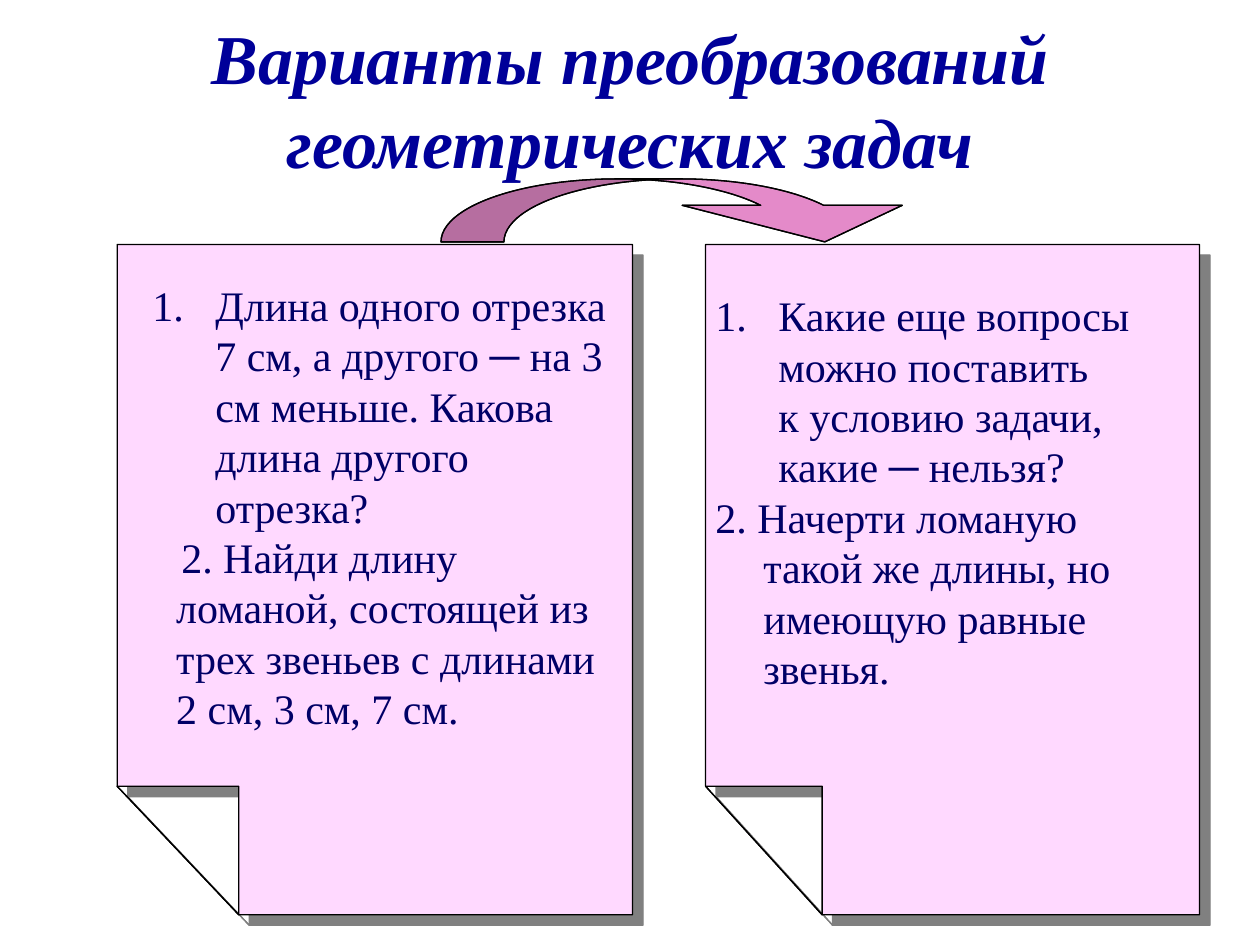
from lxml import etree
from pptx import Presentation
from pptx.dml.color import RGBColor
from pptx.enum.shapes import MSO_SHAPE
from pptx.enum.text import MSO_ANCHOR, MSO_AUTO_SIZE, PP_ALIGN
from pptx.oxml.ns import qn
from pptx.util import Inches, Pt

CENTER = PP_ALIGN.CENTER
MIDDLE = MSO_ANCHOR.MIDDLE
FIXED = MSO_AUTO_SIZE.NONE
GROW = MSO_AUTO_SIZE.SHAPE_TO_FIT_TEXT
CURVED_ARROW = MSO_SHAPE.CURVED_DOWN_ARROW
TITLE_ONLY = 5

PAPER = RGBColor(0xFF, 0xD9, 0xFF)
ARROW = RGBColor(0xE1, 0x87, 0xC3)
GLAZE = RGBColor(0xFF, 0xA5, 0xFF)
BLACK = RGBColor(0x00, 0x00, 0x00)
TITLE_BLUE = RGBColor(0x00, 0x00, 0x99)
TEXT_BLUE = RGBColor(0x00, 0x00, 0x66)
SHADOW_GREY = RGBColor(0x80, 0x80, 0x80)
FONT = "Times New Roman"


def write(paragraph, text, size=24, color=TEXT_BLUE, bold=False, italic=False,
          align=None, margin=0, indent=0, numbered=False):
    properties = paragraph._p.get_or_add_pPr()
    properties.set("marL", str(Inches(margin)))
    properties.set("indent", str(Inches(indent)))
    if numbered:
        etree.SubElement(properties, qn("a:buAutoNum"), type="arabicPeriod")
    else:
        etree.SubElement(properties, qn("a:buNone"))
    paragraph.alignment = align
    paragraph.text = text
    for run in paragraph.runs:
        run.font.name = FONT
        run.font.size = Pt(size)
        run.font.bold = bold
        run.font.italic = italic
        run.font.color.rgb = color


class SlideBuilder:
    def __init__(self, slide):
        self.slide = slide

    def title(self, text, left, top, width, height):
        title = self.slide.shapes.title
        title.left, title.top = Inches(left), Inches(top)
        title.width, title.height = Inches(width), Inches(height)
        frame = title.text_frame
        frame.word_wrap = True
        frame.auto_size = FIXED
        frame.vertical_anchor = MIDDLE
        write(frame.paragraphs[0], text, size=40, color=TITLE_BLUE,
              bold=True, italic=True, align=CENTER)

    def paint(self, shape, color):
        shape.fill.solid()
        shape.fill.fore_color.rgb = color
        shape.line.color.rgb = BLACK
        shape.line.width = Pt(0.75)
        shape.shadow.inherit = False

    def sheet(self, left, top, width, height):
        right, bottom = left + width, top + height
        fold_right = left + 0.236 * width
        fold_top = bottom - 1.02
        builder = self.slide.shapes.build_freeform(
            Inches(fold_right), Inches(bottom))
        outline = [(left, fold_top), (left, top), (right, top), (right, bottom)]
        fold = [(fold_right, fold_top), (fold_right, bottom)]
        builder.add_line_segments([(Inches(x), Inches(y)) for x, y in outline])
        builder.move_to(Inches(left), Inches(fold_top))
        builder.add_line_segments([(Inches(x), Inches(y)) for x, y in fold])
        shape = builder.convert_to_shape()
        self.paint(shape, PAPER)
        effects = shape._element.spPr.find(qn("a:effectLst"))
        shadow = etree.SubElement(effects, qn("a:outerShdw"), dist=str(Pt(8.5)),
                                  dir="2700000", algn="ctr", rotWithShape="0")
        etree.SubElement(shadow, qn("a:srgbClr"), val=str(SHADOW_GREY))

    def text(self, items, left, top, width, height):
        box = self.slide.shapes.add_textbox(
            Inches(left), Inches(top), Inches(width), Inches(height))
        frame = box.text_frame
        frame.word_wrap = True
        frame.auto_size = GROW
        for index, (text, style) in enumerate(items):
            paragraph = frame.add_paragraph() if index else frame.paragraphs[0]
            write(paragraph, text, **style)

    def arrow(self, color, left, top, width, height, opacity=None):
        shape = self.slide.shapes.add_shape(
            CURVED_ARROW, Inches(left), Inches(top), Inches(width), Inches(height))
        for index, value in enumerate((1.927, 3.493, 0.58)):
            shape.adjustments[index] = value
        self.paint(shape, color)
        if opacity is not None:
            fill_color = shape._element.spPr.find(qn("a:solidFill"))[0]
            etree.SubElement(fill_color, qn("a:alpha"), val=str(opacity * 1000))


def main():
    presentation = Presentation()
    presentation.slide_width = Inches(10)
    presentation.slide_height = Inches(7.5)
    slide = presentation.slides.add_slide(presentation.slide_layouts[TITLE_ONLY])
    builder = SlideBuilder(slide)

    builder.sheet(0.93, 1.94, 4.09, 5.32)
    builder.text([
        ("Длина одного отрезка 7 см, а другого ─ на 3 см меньше. "
         "Какова длина другого отрезка?",
         dict(margin=0.69, indent=-0.5, numbered=True)),
        ("2. Найди длину ломаной, состоящей из трех звеньев с длинами "
         "2 см, 3 см, 7 см.", dict(margin=0.38, indent=0.04)),
    ], 0.92, 2.17, 4.08, 3.74)

    builder.sheet(5.6, 1.94, 3.92, 5.32)
    builder.text([
        ("Какие еще вопросы можно поставить\vк условию задачи, какие ─ нельзя?",
         dict(margin=0.5, indent=-0.5, numbered=True)),
        ("2. Начерти ломаную\vтакой же длины, но имеющую равные звенья.",
         dict(margin=0.38, indent=-0.38)),
    ], 5.58, 2.25, 4, 3.33)

    arrow_place = (3.5, 1.42, 3.92, 0.5)
    builder.arrow(ARROW, *arrow_place)
    builder.title("Варианты преобразований геометрических задач", 0, 0.42, 10, 0.72)
    builder.arrow(GLAZE, *arrow_place, opacity=10)

    presentation.save("out.pptx")


if __name__ == "__main__":
    main()
